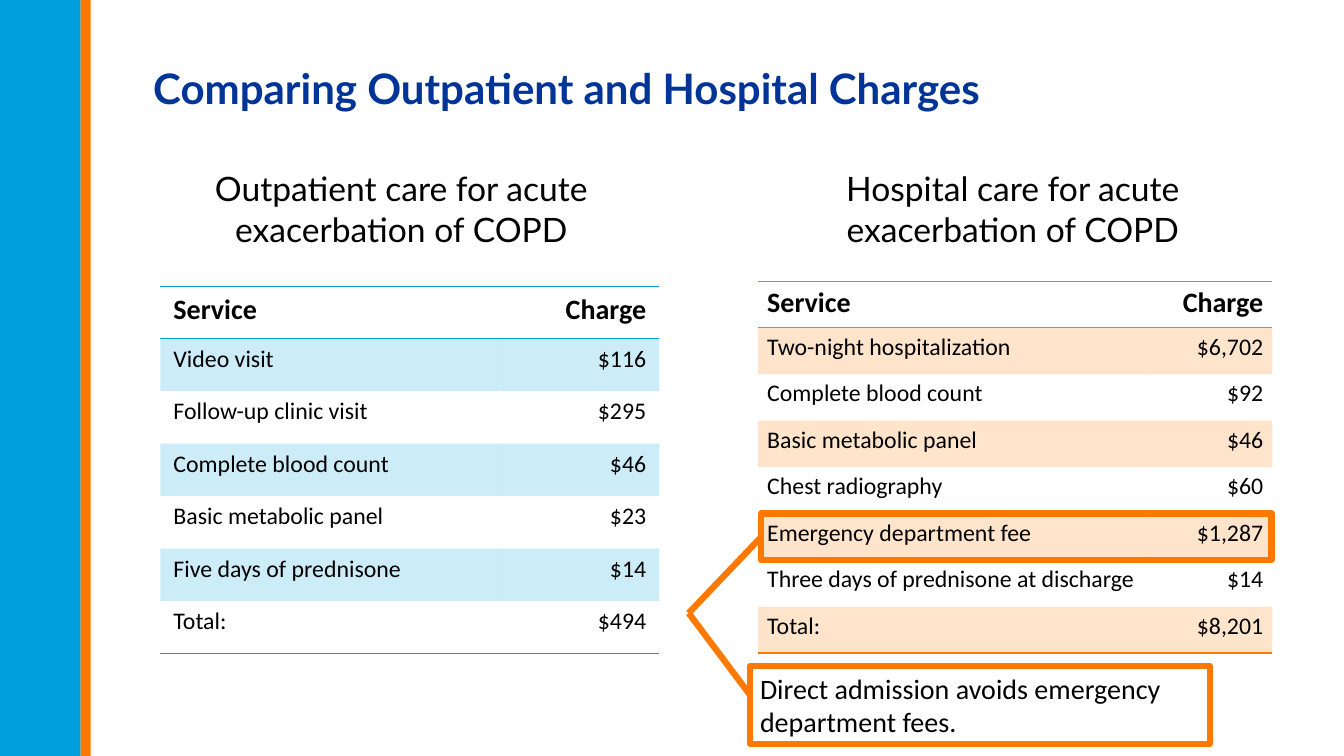
from dataclasses import dataclass

from lxml.etree import SubElement
from pptx import Presentation
from pptx.dml.color import RGBColor
from pptx.enum.shapes import MSO_CONNECTOR, MSO_SHAPE
from pptx.enum.text import MSO_ANCHOR, PP_ALIGN
from pptx.oxml.ns import qn
from pptx.util import Inches, Pt

# Content
TITLE = "Comparing Outpatient and Hospital Charges"
CALLOUT = "Direct admission avoids emergency department fees."
OUTPATIENT = [
    ("Service", "Charge"),
    ("Video visit", "$116"),
    ("Follow-up clinic visit", "$295"),
    ("Complete blood count", "$46"),
    ("Basic metabolic panel", "$23"),
    ("Five days of prednisone", "$14"),
    ("Total:", "$494"),
]
HOSPITAL = [
    ("Service", "Charge"),
    ("Two-night hospitalization", "$6,702"),
    ("Complete blood count", "$92"),
    ("Basic metabolic panel", "$46"),
    ("Chest radiography", "$60"),
    ("Emergency department fee", "$1,287"),
    ("Three days of prednisone at discharge", "$14"),
    ("Total:", "$8,201"),
]
FEE_ROW = 5


@dataclass(frozen=True)
class Theme:
    blue: str = "00A0DE"
    orange: str = "FF7900"
    navy: str = "003497"
    black: str = "000000"
    heading_font: str = "Lato"
    body_font: str = "Calibri"
    title_size: float = 30
    heading_size: float = 24
    header_size: float = 20
    body_size: float = 17
    frame_width: float = 4.5
    rule_width: float = 1
    tint: int = 20


theme = Theme()
PLAIN_TABLE_STYLE = "{2D5ABB26-0587-4C30-8999-92F81FD0307C}"

# Boxes: left, top, width, height in percent of the slide
SIDEBAR_BOX = (0, 0, 6, 100)
STRIPE_BOX = (6, 0, 0.75, 100)
TITLE_BOX = (10.65, 5.33, 82.52, 13.33)
CALLOUT_BOX = (55.81, 88.13, 34.21, 10.27)
ELBOW = (51.24, 81.1)

# Each panel: heading, heading box, rows, table box, first column share, insets, colour
PANELS = [
    ("Outpatient care for acute exacerbation of COPD", (10.65, 21.6, 38.41, 12.13),
     OUTPATIENT, (11.93, 37.87, 37.13, 48.6), 0.675, (0.13, 0.06), theme.blue),
    ("Hospital care for acute exacerbation of COPD", (57.39, 21.6, 35.93, 12.13),
     HOSPITAL, (56.41, 37.2, 38.26, 49.2), 0.76, (0.09, 0.05), theme.orange),
]

deck = Presentation()
deck.slide_width, deck.slide_height = Inches(13.33), Inches(7.5)
page = deck.slides.add_slide(deck.slide_layouts[5])


def place(*shares):
    """Turn alternating x and y percentages into slide lengths."""
    sides = (deck.slide_width, deck.slide_height) * 2
    return [round(side * share / 100) for share, side in zip(shares, sides)]


def write(frame, text, font, size, color, bold=False, align=PP_ALIGN.LEFT):
    frame.text = text
    para = frame.paragraphs[0]
    para.alignment = align
    span = para.runs[0].font
    span.name, span.size, span.bold = font, Pt(size), bold
    span.color.rgb = RGBColor.from_string(color)


def add_block(box, fill=None, line=None):
    block = page.shapes.add_shape(MSO_SHAPE.RECTANGLE, *place(*box))
    block.shadow.inherit = False
    if fill:
        block.fill.solid()
        block.fill.fore_color.rgb = RGBColor.from_string(fill)
    else:
        block.fill.background()
    if line:
        block.line.color.rgb = RGBColor.from_string(line)
        block.line.width = Pt(theme.frame_width)
    else:
        block.line.fill.background()
    return block


def add_rule(cell, side, color):
    rule = SubElement(cell._tc.get_or_add_tcPr(), qn(f"a:{side}"), w=str(Pt(theme.rule_width)))
    SubElement(SubElement(rule, qn("a:solidFill")), qn("a:srgbClr"), val=color)


def tint_cell(cell, color):
    cell.fill.solid()
    cell.fill.fore_color.rgb = RGBColor.from_string(color)
    shade = cell._tc.tcPr.find(qn("a:solidFill")).find(qn("a:srgbClr"))
    SubElement(shade, qn("a:alpha"), val=str(theme.tint * 1000))


def add_charges(rows, box, first_share, insets, color):
    left, top, width, height = place(*box)
    table = page.shapes.add_table(len(rows), 2, left, top, width, height).table
    table._tbl.tblPr.find(qn("a:tableStyleId")).text = PLAIN_TABLE_STYLE
    table.columns[0].width = round(width * first_share)
    table.columns[1].width = width - table.columns[0].width
    for row_index, row in enumerate(rows):
        table.rows[row_index].height = round(height / len(rows))
        is_header = row_index == 0
        for column, text in enumerate(row):
            cell = table.cell(row_index, column)
            cell.margin_left = cell.margin_right = Inches(insets[0])
            cell.margin_top = cell.margin_bottom = Inches(insets[1])
            write(cell.text_frame, text, theme.body_font,
                  theme.header_size if is_header else theme.body_size, theme.black,
                  is_header, PP_ALIGN.RIGHT if column else PP_ALIGN.LEFT)
            if is_header:
                add_rule(cell, "lnT", color)
            if is_header or row_index == len(rows) - 1:
                add_rule(cell, "lnB", color)
            if row_index % 2:
                tint_cell(cell, color)
            else:
                cell.fill.background()


def add_link(start, end):
    link = page.shapes.add_connector(MSO_CONNECTOR.STRAIGHT, *place(*start, *end))
    link.line.color.rgb = RGBColor.from_string(theme.orange)
    link.line.width = Pt(theme.frame_width)
    SubElement(link._element.spPr, qn("a:effectLst"))


# Side bands and title
add_block(SIDEBAR_BOX, fill=theme.blue)
add_block(STRIPE_BOX, fill=theme.orange)
title = page.shapes.title
title.left, title.top, title.width, title.height = place(*TITLE_BOX)
write(title.text_frame, TITLE, theme.heading_font, theme.title_size, theme.navy, bold=True)
title.text_frame.vertical_anchor = MSO_ANCHOR.MIDDLE
title.text_frame.paragraphs[0].line_spacing = 0.9

# Headings and tables
for heading, heading_box, rows, table_box, first_share, insets, color in PANELS:
    box = page.shapes.add_textbox(*place(*heading_box))
    box.text_frame.word_wrap = True
    write(box.text_frame, heading, theme.heading_font, theme.heading_size,
          theme.black, align=PP_ALIGN.CENTER)
    add_charges(rows, table_box, first_share, insets, color)

# Highlighted fee row, linked to its callout
table_left, table_top, table_width, table_height = PANELS[1][3]
row_height = table_height / len(HOSPITAL)
fee_box = (table_left + 0.23, table_top + FEE_ROW * row_height, table_width - 0.3, row_height)
add_block(fee_box, line=theme.orange)
add_link((fee_box[0], fee_box[1] + row_height / 2), ELBOW)
add_link((CALLOUT_BOX[0], CALLOUT_BOX[1] + CALLOUT_BOX[3] * 0.37), ELBOW)
callout = add_block(CALLOUT_BOX, line=theme.orange)
callout.text_frame.word_wrap = True
callout.text_frame.vertical_anchor = MSO_ANCHOR.TOP
write(callout.text_frame, CALLOUT, theme.body_font, theme.header_size, theme.black)

deck.save("out.pptx")
